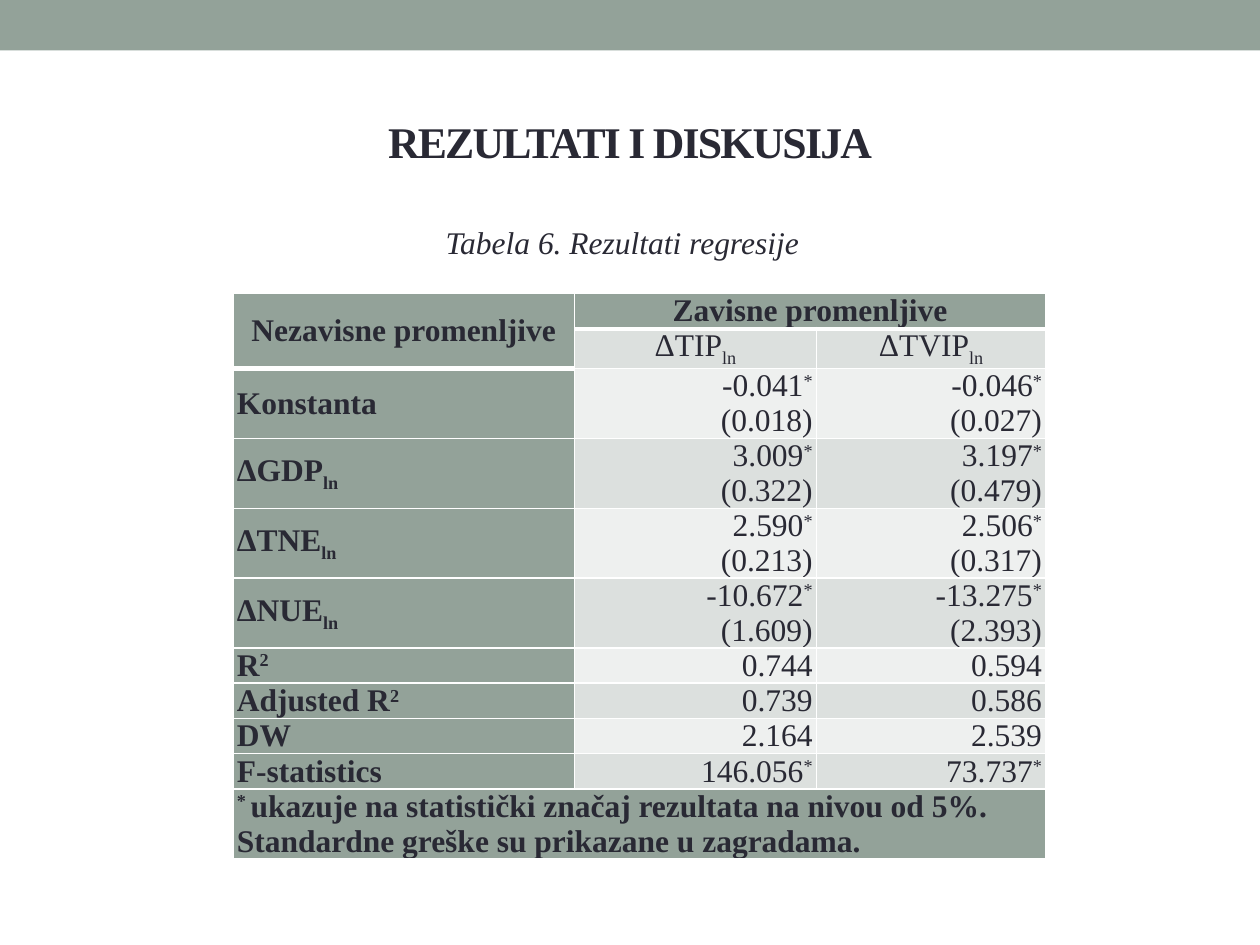
from lxml.etree import SubElement
from pptx import Presentation
from pptx.dml.color import RGBColor
from pptx.enum.shapes import MSO_SHAPE
from pptx.enum.text import MSO_ANCHOR, PP_ALIGN
from pptx.oxml.ns import qn
from pptx.util import Inches, Pt

FONT = "Times New Roman"
INK, SAGE, WHITE = "292934", "93A299", "FFFFFF"
BANDS = ["DCE0DE", "EEF0EF"]
COLUMN_WIDTHS = [2.71, 1.92, 1.82]
SINGLE, DOUBLE = 0.28, 0.55
# Text between tildes is raised, or lowered when it reads "ln".
ROWS = [
    ["Nezavisne promenljive", "Zavisne promenljive", ""],
    ["", "ΔTIP~ln~", "ΔTVIP~ln~"],
    ["Konstanta", "-0.041~*~\n(0.018)", "-0.046~*~\n(0.027)"],
    ["ΔGDP~ln~", "3.009~*~\n(0.322)", "3.197~*~\n(0.479)"],
    ["ΔTNE~ln~", "2.590~*~\n(0.213)", "2.506~*~\n(0.317)"],
    ["ΔNUE~ln~", "-10.672~*~\n(1.609)", "-13.275~*~\n(2.393)"],
    ["R~2~", "0.744", "0.594"],
    ["Adjusted R~2~", "0.739", "0.586"],
    ["DW", "2.164", "2.539"],
    ["F-statistics", "146.056~*~", "73.737~*~"],
    ["~* ~ukazuje na statistički značaj rezultata na nivou od 5%. "
     "Standardne greške su prikazane u zagradama.", "", ""],
]


def color(value):
    return RGBColor.from_string(value)


def paint(target, value):
    target.fill.solid()
    target.fill.fore_color.rgb = color(value)


def style_run(run, size=18, bold=False, italic=False):
    run.font.name = FONT
    run.font.size = Pt(size)
    run.font.bold = bold
    run.font.italic = italic
    run.font.color.rgb = color(INK)


def write_line(paragraph, line, align, bold):
    paragraph.alignment = align
    for position, piece in enumerate(line.split("~")):
        if not piece:
            continue
        run = paragraph.add_run()
        run.text = piece
        style_run(run, bold=bold)
        if position % 2:
            baseline = -25000 if piece == "ln" else 30000
            run.font._element.set("baseline", str(baseline))


def add_borders(cell, bottom_width):
    properties = cell._tc.get_or_add_tcPr()
    sides = [("lnL", 1), ("lnR", 1), ("lnT", 1), ("lnB", bottom_width)]
    for index, (side, width) in enumerate(sides):
        line = SubElement(properties, qn(f"a:{side}"), w=str(Pt(width)))
        fill = SubElement(line, qn("a:solidFill"))
        SubElement(fill, qn("a:srgbClr"), val=WHITE)
        properties.insert(index, line)


def add_band(slide, left, top, width, height):
    band = slide.shapes.add_shape(MSO_SHAPE.RECTANGLE, left, top, width, height)
    band.shadow.inherit = False
    paint(band, SAGE)
    band.line.fill.background()


def place_title(slide, left, top, width, height):
    title = slide.shapes.title
    title.left, title.top, title.width, title.height = left, top, width, height
    title.text_frame.text = "REZULTATI I DISKUSIJA"
    title.text_frame.vertical_anchor = MSO_ANCHOR.MIDDLE
    heading = title.text_frame.paragraphs[0]
    heading.alignment = PP_ALIGN.CENTER
    style_run(heading.runs[0], size=25, bold=True)
    heading.runs[0].font._element.set("spc", "-100")


def add_caption(slide, left, top, width, height):
    caption = slide.shapes.add_textbox(left, top, width, height)
    paint(caption, WHITE)
    frame = caption.text_frame
    frame.text = "Tabela 6. Rezultati regresije"
    frame.word_wrap = False
    frame.vertical_anchor = MSO_ANCHOR.MIDDLE
    frame.paragraphs[0].alignment = PP_ALIGN.CENTER
    style_run(frame.paragraphs[0].runs[0], italic=True)


def fill_cell(cell, content, row, column):
    heading = row == 0 or column == 0
    last = row == len(ROWS) - 1
    paint(cell, SAGE if heading or last else BANDS[(row + 1) % 2])
    add_borders(cell, 3 if row == 0 or (row == 1 and column == 0) else 1)
    cell.margin_left = cell.margin_right = Inches(0.03)
    cell.margin_top = cell.margin_bottom = 0
    top_heading = row < 2 and column > 0
    cell.vertical_anchor = MSO_ANCHOR.TOP if top_heading else MSO_ANCHOR.MIDDLE
    if row < 2:
        align = PP_ALIGN.CENTER
    else:
        align = PP_ALIGN.RIGHT if column else PP_ALIGN.LEFT
    frame = cell.text_frame
    for index, line in enumerate(content.split("\n")):
        paragraph = frame.add_paragraph() if index else frame.paragraphs[0]
        paragraph.font.size = Pt(18)
        write_line(paragraph, line, align, heading)


def add_regression_table(slide, left, top, width, height):
    table = slide.shapes.add_table(
        len(ROWS), len(COLUMN_WIDTHS), left, top, width, height).table
    for column, column_width in zip(table.columns, COLUMN_WIDTHS):
        column.width = Inches(column_width)
    for row, contents in enumerate(ROWS):
        tall = 2 <= row <= 5 or row == len(ROWS) - 1
        table.rows[row].height = Inches(DOUBLE if tall else SINGLE)
        for column, content in enumerate(contents):
            fill_cell(table.cell(row, column), content, row, column)
    table.cell(0, 0).merge(table.cell(1, 0))
    table.cell(0, 1).merge(table.cell(0, 2))
    table.cell(len(ROWS) - 1, 0).merge(table.cell(len(ROWS) - 1, 2))


def main():
    deck = Presentation()
    deck.slide_width, deck.slide_height = Inches(10), Inches(7.5)
    slide = deck.slides.add_slide(deck.slide_layouts[5])
    add_band(slide, 0, 0, deck.slide_width, Inches(0.4))
    place_title(slide, Inches(0.5), Inches(0.58), Inches(9), Inches(1.08))
    add_regression_table(
        slide, Inches(1.85), Inches(2.33), Inches(6.45), Inches(4.43))
    add_caption(slide, Inches(3.42), Inches(1.72), Inches(3.04), Inches(0.4))
    deck.save("out.pptx")


if __name__ == "__main__":
    main()
